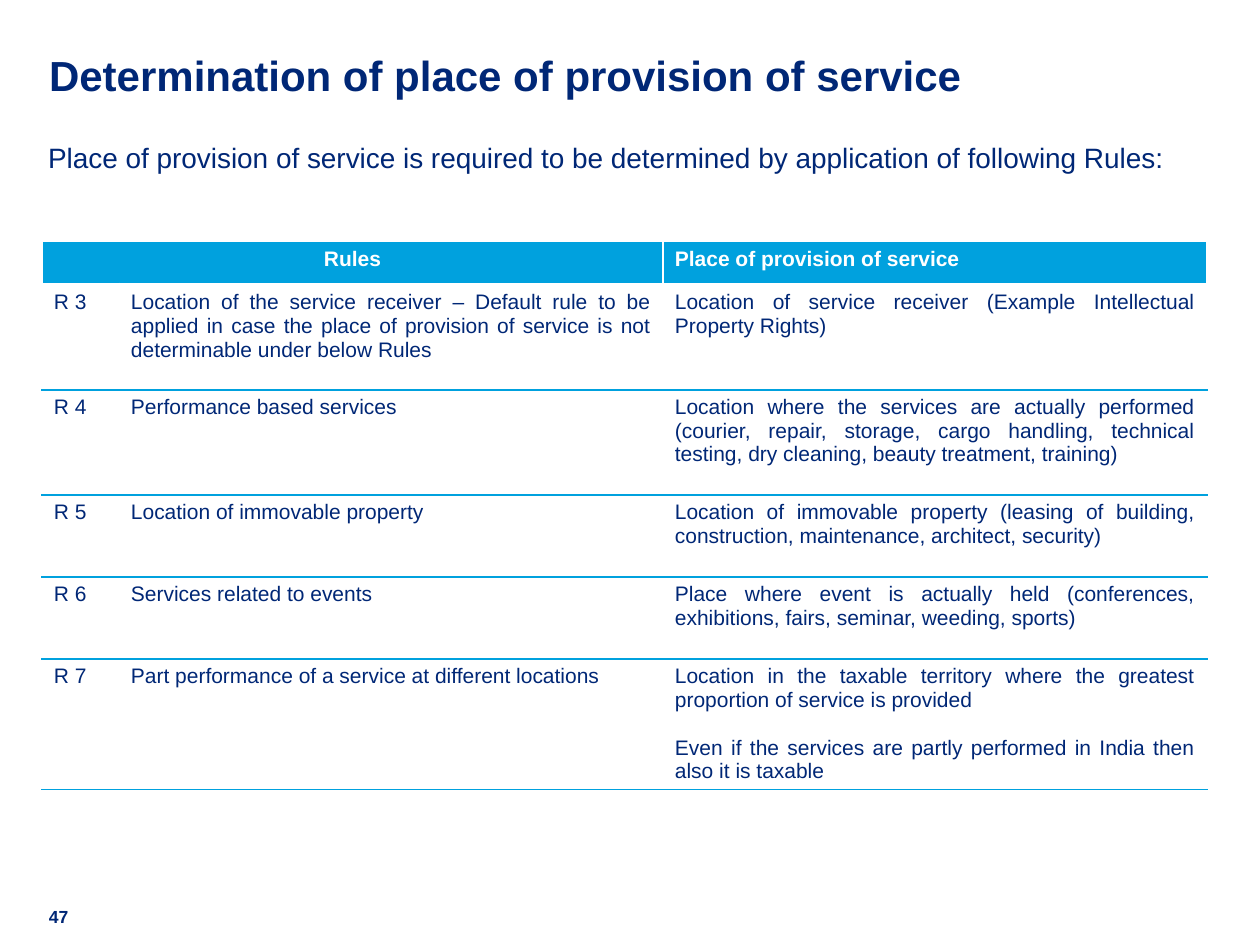
from lxml.etree import SubElement as Sub
from pptx import Presentation
from pptx.dml.color import RGBColor as RGB
from pptx.enum.text import MSO_ANCHOR as Anchor, MSO_AUTO_SIZE as Auto, PP_ALIGN as Align
from pptx.oxml.ns import qn
from pptx.util import Emu, Pt

TITLE = "Determination of place of provision of service"
LEAD = "Place of provision of service is required to be determined by application of following Rules:"
PAGE = "47"
HEADS = ("Rules", "Place of provision of service")
RULES = [
    ("R 3", "Location of the service receiver – Default rule to be applied in case "
            "the place of provision of service is not determinable under below Rules",
     ["Location of service receiver (Example Intellectual Property Rights)"]),
    ("R 4", "Performance based services",
     ["Location where the services are actually performed (courier, repair, storage, "
      "cargo handling, technical testing, dry cleaning, beauty treatment, training)"]),
    ("R 5", "Location of immovable property",
     ["Location of immovable property (leasing of building, construction, "
      "maintenance, architect, security)"]),
    ("R 6", "Services related to events",
     ["Place where event is actually held (conferences, exhibitions, fairs, "
      "seminar, weeding, sports)"]),
    ("R 7", "Part performance of a service at different locations",
     ["Location in the taxable territory where the greatest proportion of service is provided",
      "Even if the services are partly performed in India then also it is taxable"]),
]
THEME = dict(font="Arial", navy="002776", blue="00A1DE", white="FFFFFF",
             title=24, lead=16, cell=12, page=10)

PX = 914400 // 126
TABLE_AT = (42, 241)
COLS = (77, 544, 544)
ROWS = (44, 105, 105, 82, 82, 128)
PAD_X, PAD_Y = 12, 6


def px(*nums):
    return [Emu(n * PX) for n in nums]


def write(par, text, size, color="navy", bold=False, align=Align.LEFT):
    par.alignment = align
    run = par.add_run()
    run.text = text
    font = run.font
    font.name, font.size, font.bold = THEME["font"], Pt(THEME[size]), bold
    font.color.rgb = RGB.from_string(THEME[color])


def place(shape, *box):
    """Move a text shape and strip its insets; return its first paragraph."""
    shape.left, shape.top, shape.width, shape.height = px(*box)
    frame = shape.text_frame
    frame.margin_left = frame.margin_right = frame.margin_top = frame.margin_bottom = 0
    frame.word_wrap, frame.auto_size = True, Auto.NONE
    frame.vertical_anchor = Anchor.TOP
    return frame.paragraphs[0]


def edge(cell, side, color, width):
    line = Sub(cell._tc.get_or_add_tcPr(), qn("a:ln" + side), w=str(Pt(width)))
    Sub(Sub(line, qn("a:solidFill")), qn("a:srgbClr"), val=THEME[color])


def fill_cell(cell, texts, align, head=False):
    cell.margin_left, cell.margin_right, cell.margin_top, cell.margin_bottom = px(
        PAD_X, PAD_X, PAD_Y, PAD_Y)
    for i, text in enumerate(texts):
        par = cell.text_frame.paragraphs[0] if i == 0 else cell.text_frame.add_paragraph()
        if i:
            par.space_before = Pt(14)
        write(par, text, "cell", "white" if head else "navy", head, align)


def style_cell(cell, row):
    """Draw white sides and blue rules, with a thick white line below the header."""
    edge(cell, "L", "white", 1)
    edge(cell, "R", "white", 1)
    edge(cell, "T", "white" if row == 0 else "blue", 1) if row != 1 else edge(cell, "T", "white", 3)
    edge(cell, "B", "white" if row == 0 else "blue", 3 if row == 0 else 1)
    if row == 0:
        cell.fill.solid()
        cell.fill.fore_color.rgb = RGB.from_string(THEME["blue"])
    else:
        cell.fill.background()


def add_rules(slide):
    table = slide.shapes.add_table(
        len(ROWS), len(COLS), *px(*TABLE_AT, sum(COLS), sum(ROWS))).table
    table.horz_banding = False
    for col, wide in zip(table.columns, px(*COLS)):
        col.width = wide
    for row, high in zip(table.rows, px(*ROWS)):
        row.height = high
    for r in range(len(ROWS)):
        for c in range(len(COLS)):
            style_cell(table.cell(r, c), r)
    table.cell(0, 0).merge(table.cell(0, 1))
    fill_cell(table.cell(0, 0), [HEADS[0]], Align.CENTER, True)
    fill_cell(table.cell(0, 2), [HEADS[1]], Align.LEFT, True)
    for r, (code, rule, where) in enumerate(RULES, 1):
        fill_cell(table.cell(r, 0), [code], Align.LEFT)
        fill_cell(table.cell(r, 1), [rule], Align.JUSTIFY)
        fill_cell(table.cell(r, 2), where, Align.JUSTIFY)


def main():
    deck = Presentation()
    deck.slide_width, deck.slide_height = px(1260, 945)
    slide = deck.slides.add_slide(deck.slide_layouts[1])
    write(place(slide.shapes.title, 49, 49, 1160, 87), TITLE, "title", bold=True)

    lead = place(slide.placeholders[1], 48, 141, 1133, 794)
    props = lead._p.get_or_add_pPr()
    props.set("marL", "0")
    props.set("indent", "0")
    Sub(props, qn("a:buNone"))
    lead.space_before, lead.space_after = Pt(0), Pt(3)
    write(lead, LEAD, "lead")

    add_rules(slide)
    page = slide.shapes.add_textbox(*px(0, 0, 1, 1))
    write(place(page, 49, 906, 49, 16), PAGE, "page", bold=True)
    deck.save("out.pptx")


if __name__ == "__main__":
    main()
